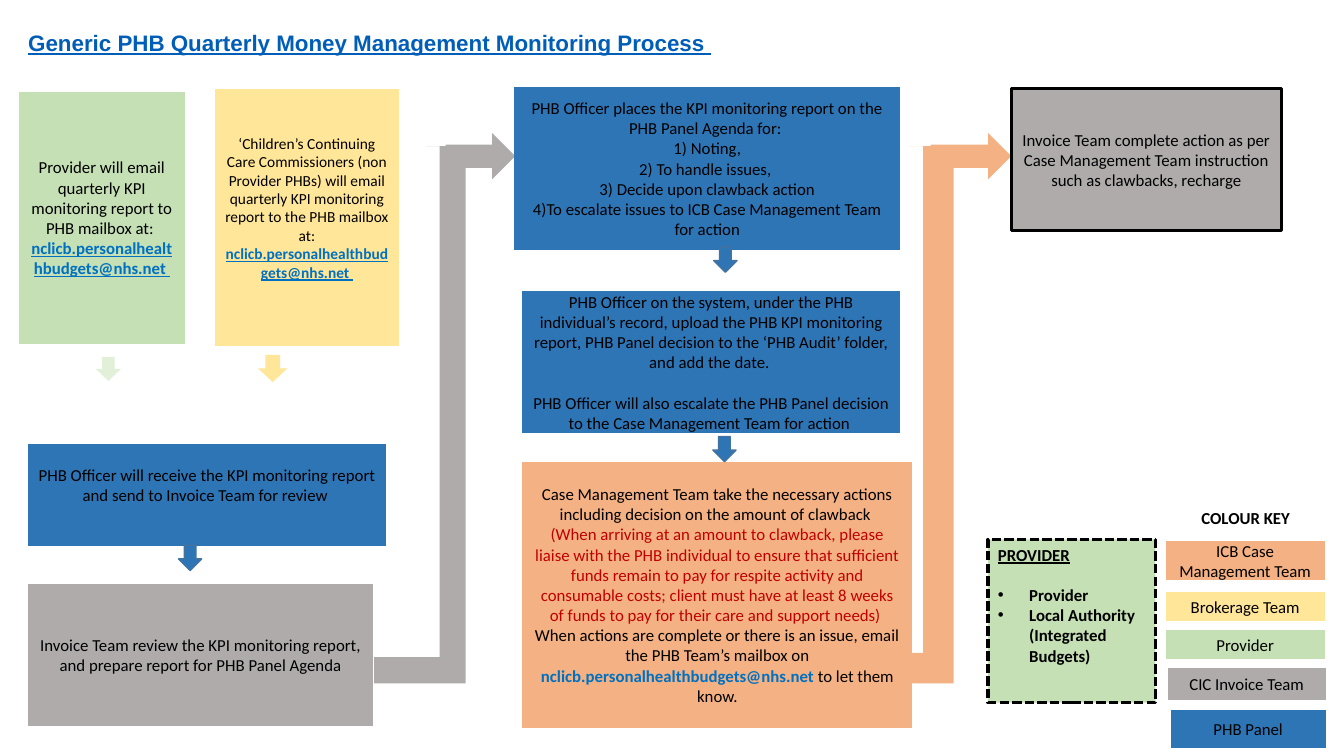
from lxml import etree
from pptx import Presentation
from pptx.dml.color import RGBColor
from pptx.enum import dml, shapes, text
from pptx.oxml import ns
from pptx.util import Inches, Pt

BLACK = RGBColor(0x00, 0x00, 0x00)
BLUE = RGBColor(0x2E, 0x75, 0xB6)
BLUE_EDGE = RGBColor(0x43, 0x73, 0x9E)
GREEN = RGBColor(0xC5, 0xE0, 0xB4)
PALE_GREEN = RGBColor(0xE2, 0xF0, 0xD9)
YELLOW = RGBColor(0xFF, 0xE6, 0x99)
ORANGE = RGBColor(0xF4, 0xB1, 0x83)
GREY = RGBColor(0xAF, 0xAB, 0xAB)
RED = RGBColor(0xC0, 0x00, 0x00)
MAIL_BLUE = RGBColor(0x00, 0x70, 0xC0)
TITLE_BLUE = RGBColor(0x00, 0x5E, 0xB8)

# Run styles: colour, bold, underline
PLAIN = (BLACK, False, False)
STRONG = (BLACK, True, False)
HEADING = (BLACK, True, True)
WARNING = (RED, False, False)
MAIL = (MAIL_BLUE, True, False)
MAIL_LINK = (MAIL_BLUE, True, True)
MAILBOX = "nclicb.personalhealthbudgets@nhs.net"

PROCESS = shapes.MSO_SHAPE.FLOWCHART_PROCESS
DOWN = shapes.MSO_SHAPE.DOWN_ARROW
CENTER = text.PP_ALIGN.CENTER
MIDDLE = text.MSO_ANCHOR.MIDDLE

presentation = Presentation()
presentation.slide_width = Inches(13.33)
presentation.slide_height = Inches(7.5)
slide = presentation.slides.add_slide(presentation.slide_layouts[5])


def draw(kind, place, fill, edge=None, width=1):
    shape = slide.shapes.add_shape(kind, *[Inches(length) for length in place])
    shape.shadow.inherit = False
    shape.fill.solid()
    shape.fill.fore_color.rgb = fill
    if edge is None:
        shape.line.fill.background()
    else:
        shape.line.color.rgb = edge
        shape.line.width = Pt(width)
    return shape


def write(shape, paragraphs, size=12, align=CENTER, anchor=MIDDLE):
    """Fill a shape; a plain string stands for a paragraph of one plain run."""
    frame = shape.text_frame
    frame.word_wrap = True
    frame.vertical_anchor = anchor
    for index, content in enumerate(paragraphs):
        paragraph = frame.paragraphs[0] if index == 0 else frame.add_paragraph()
        paragraph.alignment = align
        runs = [(content, PLAIN)] if isinstance(content, str) else content
        for words, (color, bold, underline) in runs:
            run = paragraph.add_run()
            run.text = words
            run.font.name = "Calibri"
            run.font.size = Pt(size)
            run.font.color.rgb = color
            run.font.bold = bold
            run.font.underline = underline
    return frame


# Title
title = slide.shapes.title
title.left, title.top, title.width, title.height = map(Inches, (0.28, 0.32, 11.56, 0.54))
title_frame = title.text_frame
title_frame.text = "Generic PHB Quarterly Money Management Monitoring Process "
title_frame.auto_size = text.MSO_AUTO_SIZE.NONE
title_frame.vertical_anchor = text.MSO_ANCHOR.TOP
title_frame.margin_left = title_frame.margin_right = 0
title_frame.margin_top = title_frame.margin_bottom = 0
title_paragraph = title_frame.paragraphs[0]
title_paragraph.alignment = text.PP_ALIGN.LEFT
title_paragraph.line_spacing = 0.9
title_font = title_paragraph.runs[0].font
title_font.name = "Arial"
title_font.size = Pt(16)
title_font.bold = title_font.underline = True
title_font.color.rgb = TITLE_BLUE

# Long connecting arrows: a bent shaft and a head
for shaft_place, head_place, color in (
    ((8.4, 1.45, 1.21, 5.33), (9.23, 1.32, 0.8, 0.46), ORANGE),
    ((3.71, 1.45, 1.04, 5.33), (4.42, 1.32, 0.69, 0.46), GREY),
):
    shaft = draw(shapes.MSO_SHAPE.BENT_UP_ARROW, shaft_place, color)
    shaft.adjustments[2] = 0
    draw(shapes.MSO_SHAPE.RIGHT_ARROW, head_place, color)

# Process boxes
write(draw(PROCESS, (0.19, 0.91, 1.64, 2.5), GREEN), [
    "Provider will email quarterly KPI monitoring report to PHB mailbox at: ",
    [(MAILBOX + " ", MAIL_LINK)],
])
commissioners = write(draw(PROCESS, (2.13, 0.88, 1.83, 2.55), YELLOW), [[
    ("‘Children’s Continuing Care Commissioners (non Provider PHBs) will email "
     "quarterly KPI monitoring report to the PHB mailbox at: ", PLAIN),
    (MAILBOX + " ", MAIL_LINK),
]], size=11)
commissioners.margin_bottom = Inches(0.24)
receive = write(draw(PROCESS, (0.28, 4.4, 3.55, 1.02), BLUE), [
    "PHB Officer will receive the KPI monitoring report and send to Invoice Team for review ",
])
receive.margin_bottom = Inches(0.25)
write(draw(PROCESS, (0.28, 5.79, 3.42, 1.41), GREY), [
    "Invoice Team review the KPI monitoring report, and prepare report for PHB Panel Agenda",
])
write(draw(PROCESS, (5.1, 0.86, 3.83, 1.62), BLUE), [
    "PHB Officer places the KPI monitoring report on the PHB Panel Agenda for: ",
    "1) Noting,",
    "2) To handle issues, ",
    "3) Decide upon clawback action",
    "4)To escalate issues to ICB Case Management Team for action",
])
upload = write(draw(PROCESS, (5.18, 2.89, 3.75, 1.41), BLUE), [
    "PHB Officer on the system, under the PHB individual’s record, upload the PHB KPI "
    "monitoring report, PHB Panel decision to the ‘PHB Audit’ folder, and add the date. ",
    "PHB Officer will also escalate the PHB Panel decision to the Case Management Team "
    "for action ",
])
upload.paragraphs[1].space_before = Pt(14.6)
write(draw(PROCESS, (5.18, 4.58, 3.87, 2.64), ORANGE), [
    "Case Management Team take the necessary actions including decision on the amount "
    "of clawback ",
    [("(When arriving at an amount to clawback, please liaise with the PHB individual to "
      "ensure that sufficient funds remain to pay for respite activity and consumable "
      "costs; client must have at least 8 weeks of funds to pay for their care and "
      "support needs) ", WARNING)],
    [("When actions are complete or there is an issue, email the PHB Team’s mailbox on ",
      PLAIN), (MAILBOX, MAIL), (" to let them know.", PLAIN)],
])
write(draw(PROCESS, (10.03, 0.88, 2.68, 1.41), GREY, BLACK, 2.25), [
    "Invoice Team complete action as per Case Management Team instruction such as "
    "clawbacks, recharge",
])

# Small arrows between steps
draw(DOWN, (0.95, 3.54, 0.25, 0.24), PALE_GREEN)
draw(DOWN, (2.56, 3.52, 0.29, 0.27), YELLOW)
for left, top in ((7.08, 2.45), (7.07, 4.33), (1.77, 5.41)):
    draw(DOWN, (left, top, 0.23, 0.25), BLUE, BLUE_EDGE)

# Colour key
key_title = slide.shapes.add_textbox(Inches(11.44), Inches(4.99), Inches(1.83), Inches(0.3))
write(key_title, [[("COLOUR KEY", STRONG)]], anchor=text.MSO_ANCHOR.TOP)
for label, color, place in (
    ("ICB Case Management Team", ORANGE, (11.56, 5.37, 1.58, 0.38)),
    ("Brokerage Team", YELLOW, (11.56, 5.87, 1.58, 0.29)),
    ("Provider", GREEN, (11.56, 6.25, 1.58, 0.29)),
    ("CIC Invoice Team", GREY, (11.58, 6.63, 1.57, 0.31)),
    ("PHB Panel", BLUE, (11.61, 7.04, 1.54, 0.38)),
):
    write(draw(PROCESS, place, color), [label])

# Provider list
provider = draw(shapes.MSO_SHAPE.RECTANGLE, (9.8, 5.35, 1.66, 1.62), GREEN, BLACK, 2.25)
provider.line.dash_style = dml.MSO_LINE.SQUARE_DOT
provider_frame = write(provider, [
    [("PROVIDER", HEADING)],
    [("Provider", STRONG)],
    [("Local Authority (Integrated Budgets)", STRONG)],
], align=text.PP_ALIGN.LEFT, anchor=text.MSO_ANCHOR.TOP)
for paragraph in provider_frame.paragraphs[1:]:
    properties = paragraph._p.get_or_add_pPr()
    properties.set("marL", str(Inches(0.31)))
    properties.set("indent", str(-Inches(0.31)))
    etree.SubElement(properties, ns.qn("a:buFont")).set("typeface", "Arial")
    etree.SubElement(properties, ns.qn("a:buChar")).set("char", "•")
provider_frame.paragraphs[1].space_before = Pt(14.6)

presentation.save("out.pptx")
